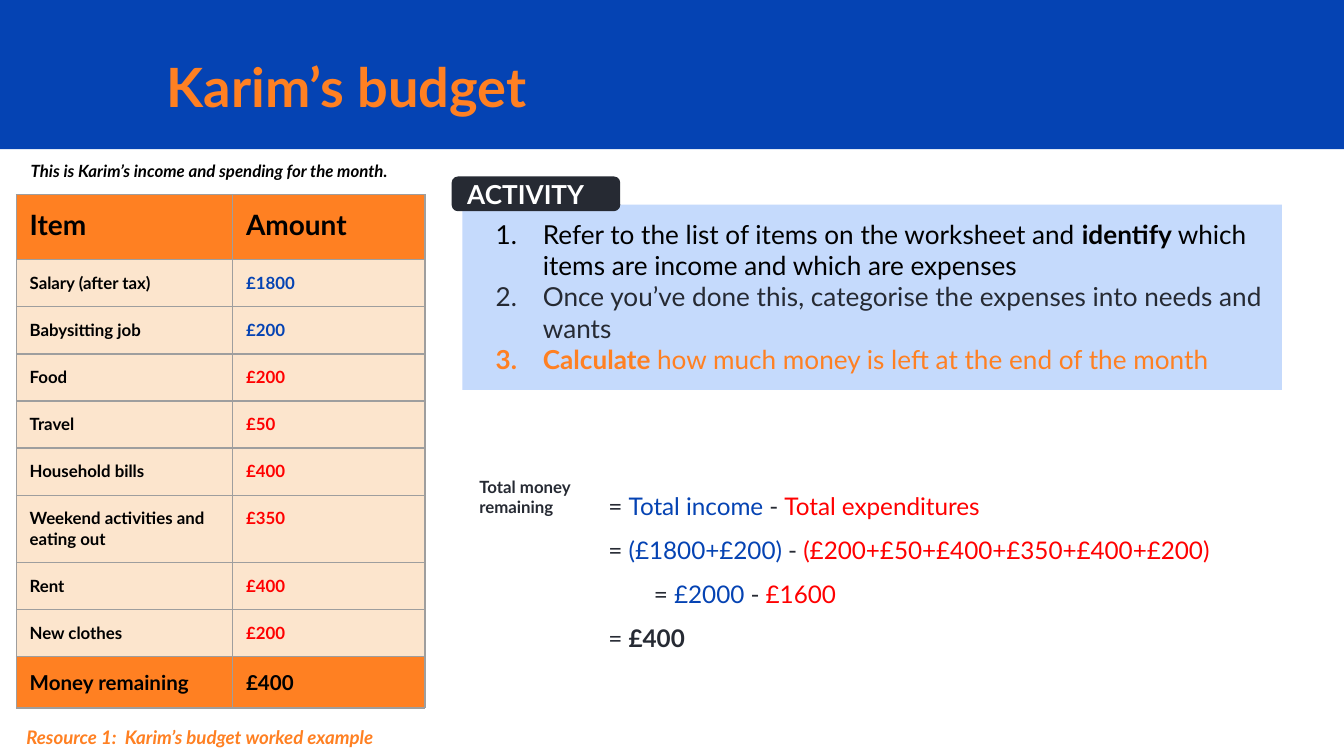
from dataclasses import dataclass

from lxml.etree import SubElement
from pptx import Presentation
from pptx.dml.color import RGBColor
from pptx.enum.shapes import MSO_SHAPE
from pptx.enum.text import MSO_ANCHOR, MSO_AUTO_SIZE, PP_ALIGN
from pptx.oxml.ns import qn
from pptx.util import Cm, Pt


@dataclass(frozen=True)
class Theme:
    font: str = "Lato"
    # Colours
    blue: str = "0543B3"
    orange: str = "FF8022"
    red: str = "FF0000"
    black: str = "000000"
    white: str = "FFFFFF"
    ink: str = "262A33"
    pale_blue: str = "C5DAFC"
    cream: str = "FCE5CD"
    grid: str = "9E9E9E"
    # Type sizes in points
    title: int = 29
    heading: int = 15
    body: int = 14
    sums: int = 13
    total: int = 11
    caption: int = 10
    small: int = 9


class SlideBuilder:
    """Adds styled elements to one page; lengths are centimetres."""

    inset = Cm(0.25)

    def __init__(self, page, theme):
        self.page = page
        self.theme = theme

    def paint(self, fill, color):
        fill.solid()
        fill.fore_color.rgb = RGBColor.from_string(color)

    def add_spans(self, paragraph, spans, size, italic=False, spacing=1.0):
        """Each span is (text, colour, bold)."""
        paragraph.alignment = PP_ALIGN.LEFT
        paragraph.line_spacing = spacing
        paragraph.font.name = self.theme.font
        paragraph.font.size = Pt(size)
        paragraph.font.italic = italic
        for text, color, bold in spans:
            span = paragraph.add_run()
            span.text = text
            span.font.bold = bold
            span.font.color.rgb = RGBColor.from_string(color)

    def frame(self, shape, anchor=MSO_ANCHOR.TOP):
        frame = shape.text_frame
        frame.word_wrap = True
        frame.auto_size = MSO_AUTO_SIZE.NONE
        frame.vertical_anchor = anchor
        frame.margin_left = frame.margin_right = self.inset
        frame.margin_top = frame.margin_bottom = self.inset
        return frame

    def paragraphs(self, frame, count):
        for _ in range(count - 1):
            frame.add_paragraph()
        return frame.paragraphs

    def title(self, place, text):
        box = self.page.shapes.title
        box.left, box.top, box.width, box.height = map(Cm, place)
        self.add_spans(self.frame(box).paragraphs[0], [(text, self.theme.orange, True)],
                       self.theme.title, spacing=1.15)

    def text(self, place, spans, size, **style):
        box = self.page.shapes.add_textbox(*map(Cm, place))
        self.add_spans(self.frame(box).paragraphs[0], spans, size, **style)

    def panel(self, place, color, kind=MSO_SHAPE.RECTANGLE):
        box = self.page.shapes.add_shape(kind, *map(Cm, place))
        box.shadow.inherit = False
        box.line.fill.background()
        self.paint(box.fill, color)
        return box

    def label(self, box, lines, size, color, anchor=MSO_ANCHOR.TOP):
        frame = self.frame(box, anchor)
        for paragraph, line in zip(self.paragraphs(frame, len(lines)), lines):
            self.add_spans(paragraph, [(line, color, True)], size)

    def numbered(self, box, items, size):
        frame = self.frame(box)
        for paragraph, spans in zip(self.paragraphs(frame, len(items)), items):
            properties = paragraph._p.get_or_add_pPr()
            properties.set("marL", str(Cm(1.27)))
            properties.set("indent", str(Cm(-0.89)))
            bullet_color = SubElement(properties, qn("a:buClr"))
            SubElement(bullet_color, qn("a:srgbClr"), val=spans[0][1])
            SubElement(properties, qn("a:buAutoNum"), type="arabicPeriod")
            self.add_spans(paragraph, spans, size)

    def working(self, place, top_inset, lines, size):
        """Stacked calculation steps; each line is (indent, spans)."""
        box = self.page.shapes.add_textbox(*map(Cm, place))
        frame = self.frame(box)
        frame.margin_top = Cm(top_inset)
        for paragraph, (indent, spans) in zip(self.paragraphs(frame, len(lines)), lines):
            properties = paragraph._p.get_or_add_pPr()
            properties.set("marL", str(Cm(indent)))
            properties.set("indent", "0")
            self.add_spans(paragraph, spans, size, spacing=1.5)

    def borders(self, cell):
        properties = cell._tc.get_or_add_tcPr()
        for side in ("a:lnL", "a:lnR", "a:lnT", "a:lnB"):
            line = SubElement(properties, qn(side), w=str(Pt(0.75)))
            fill = SubElement(line, qn("a:solidFill"))
            SubElement(fill, qn("a:srgbClr"), val=self.theme.grid)

    def table(self, left, top, widths, rows):
        """Each row is (height, fill, size, amount colour, item, amount)."""
        height = sum(row[0] for row in rows)
        grid = self.page.shapes.add_table(
            len(rows), len(widths), Cm(left), Cm(top), Cm(sum(widths)), Cm(height)).table
        grid.horz_banding = False
        for column, width in zip(grid.columns, widths):
            column.width = Cm(width)
        for line, (tall, fill, size, color, item, amount) in zip(grid.rows, rows):
            line.height = Cm(tall)
            for cell, text, ink in zip(line.cells, (item, amount), (self.theme.black, color)):
                cell.margin_left = cell.margin_right = self.inset
                cell.margin_top = cell.margin_bottom = self.inset
                self.borders(cell)
                self.paint(cell.fill, fill)
                self.add_spans(cell.text_frame.paragraphs[0], [(text, ink, True)], size)


def main():
    theme = Theme()
    deck = Presentation()
    deck.slide_width, deck.slide_height = Cm(25.4), Cm(14.29)
    page = deck.slides.add_slide(deck.slide_layouts[5])
    slide = SlideBuilder(page, theme)

    # Title on its band
    band = slide.panel((0, 0, 25.4, 2.82), theme.blue)
    page.shapes.title.element.addprevious(band.element)
    slide.title((2.9, 0.58, 19.08, 1.75), "Karim’s budget")

    # Budget table
    income = [("Salary (after tax)", "£1800"), ("Babysitting job", "£200")]
    spending = [("Food", "£200"), ("Travel", "£50"), ("Household bills", "£400"),
                ("Weekend activities and eating out", "£350"),
                ("Rent", "£400"), ("New clothes", "£200")]
    rows = [(1.23, theme.orange, theme.heading, theme.black, "Item", "Amount")]
    for entries, color in ((income, theme.blue), (spending, theme.red)):
        for item, amount in entries:
            tall = 1.27 if len(item) > 20 else 0.89
            rows.append((tall, theme.cream, theme.small, color, item, amount))
    rows.append((0.97, theme.orange, theme.total, theme.black, "Money remaining", "£400"))
    slide.table(0.31, 3.68, (4.09, 3.63), rows)

    # Calculation
    ink, blue, red = theme.ink, theme.blue, theme.red
    equals, minus = ("= ", ink, False), ("- ", ink, False)
    slide.working((8.71, 7.75, 16.54, 5.46), 1.27, [
        (2.54, [equals, ("Total income ", blue, False), minus,
                ("Total expenditures", red, False)]),
        (2.54, [equals, ("(£1800+£200) ", blue, False), minus,
                ("(£200+£50+£400+£350+£400+£200)", red, False)]),
        (3.4, [equals, ("£2000 ", blue, False), minus, ("£1600", red, False)]),
        (2.54, [equals, ("£400", ink, True)]),
    ], theme.sums)
    result = slide.panel((8.81, 8.76, 2.44, 1.27), theme.white)
    slide.label(result, ["Total money", "remaining"], theme.small, ink)

    # Captions
    slide.text((0.33, 2.79, 7.85, 0.89),
               [("This is Karim’s income and spending for the month.", theme.black, True)],
               theme.small, italic=True)
    slide.text((0.25, 13.41, 9.98, 0.94),
               [("Resource 1:  Karim’s budget worked example", theme.orange, True)],
               theme.caption, italic=True, spacing=1.15)

    # Activity panel and tab
    activity = slide.panel((8.74, 3.87, 15.49, 3.5), theme.pale_blue)
    slide.numbered(activity, [
        [("Refer to the list of items on the worksheet and ", theme.black, False),
         ("identify ", theme.black, True),
         ("which items are income and which are expenses", theme.black, False)],
        [("Once you’ve done this, categorise the expenses into needs and wants", ink, False)],
        [("Calculate ", theme.orange, True),
         ("how much money is left at the end of the month", theme.orange, False)],
    ], theme.body)
    tab = slide.panel((8.55, 3.35, 3.16, 0.63), ink, MSO_SHAPE.ROUNDED_RECTANGLE)
    slide.paint(tab.line.fill, ink)
    tab.line.width = Pt(0.75)
    slide.label(tab, ["ACTIVITY"], theme.body, theme.white, MSO_ANCHOR.MIDDLE)

    deck.save("out.pptx")


if __name__ == "__main__":
    main()
